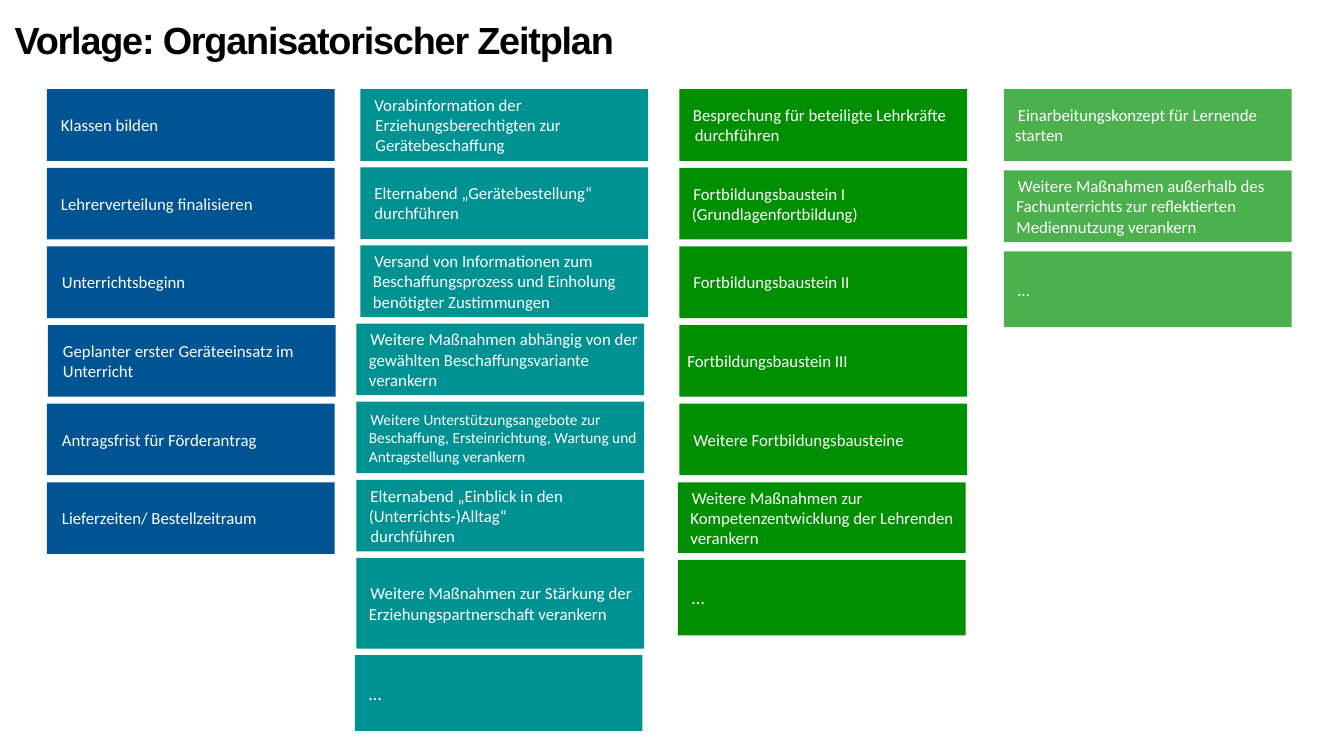
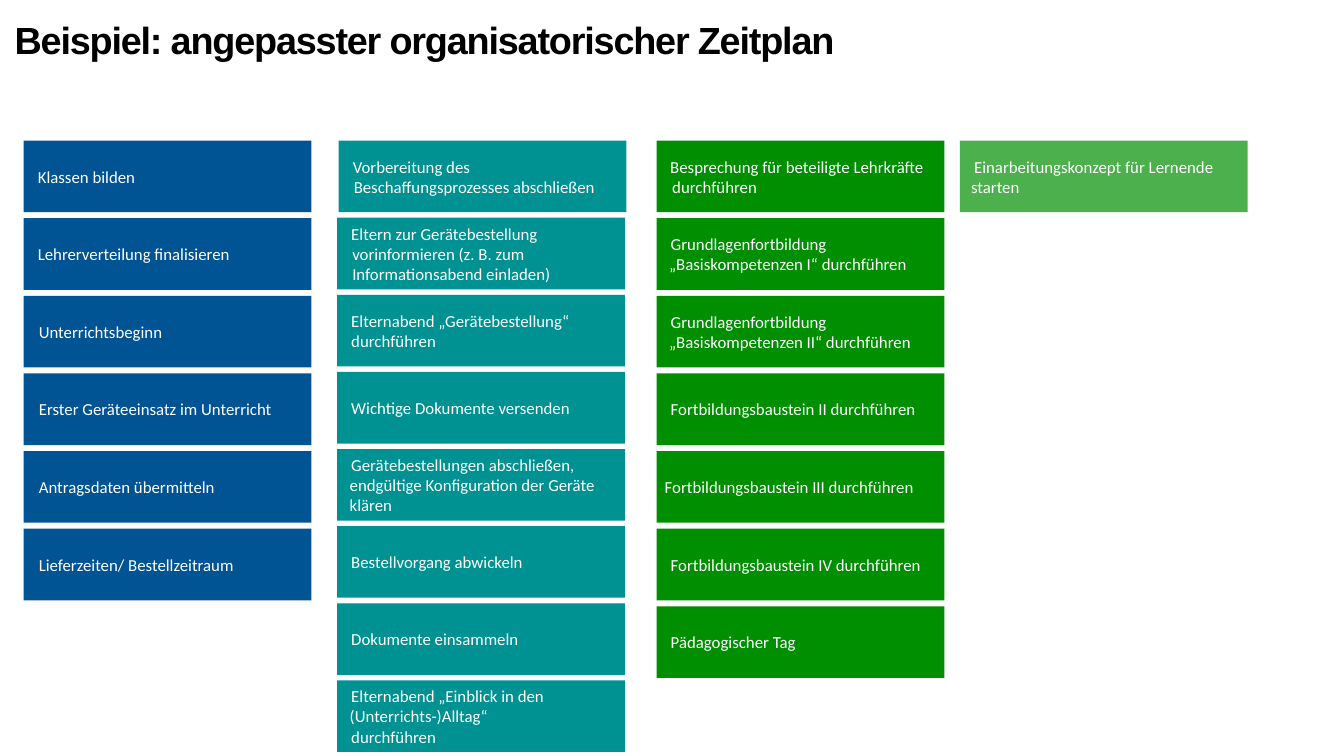
from dataclasses import dataclass

from lxml.etree import SubElement as Sub
from pptx import Presentation
from pptx.dml.color import RGBColor as RGB
from pptx.enum.shapes import MSO_SHAPE as Shape
from pptx.enum.text import MSO_ANCHOR as Anchor, MSO_AUTO_SIZE as Fit, PP_ALIGN as Align
from pptx.oxml.ns import qn
from pptx.util import Inches, Pt

# Colours
BLUE = RGB(0x00, 0x54, 0x93)
TEAL = RGB(0x00, 0x91, 0x93)
GREEN = RGB(0x00, 0x8F, 0x00)
WHITE = RGB(0xFF, 0xFF, 0xFF)
BLACK = RGB(0x00, 0x00, 0x00)

# Sizes in inches
WIDTH, HEIGHT = 26.67, 15
BOX_W, BOX_H = 5.71, 1.42

# Text indents: left margin and first line
NEAR = (0.25, 0.03)
EVEN = (0.3, 0)
STEP = (0.22, 0.06)
BACK = (0.31, -0.04)
HANG = (0.3, -0.02)
OUT = (0.22, -0.06)


@dataclass
class Box:
    text: str
    ind: tuple = NEAR
    high: float = BOX_H
    shift: float = 0
    size: int = 24


@dataclass
class Stack:
    left: float
    gap: float
    fill: RGB
    boxes: list
    alpha: int = 100


MOVED = -0.08  # lower teal boxes sit a little further left

PLAN = [
    Stack(0.93, 0.14, BLUE, [
        Box("Klassen bilden"),
        Box("Lehrerverteilung finalisieren"),
        Box("Unterrichtsbeginn", EVEN),
        Box("Geplanter erster Geräteeinsatz im Unterricht", EVEN, shift=0.02),
        Box("Antragsfrist für Förderantrag", EVEN),
        Box("Lieferzeiten/ Bestellzeitraum", EVEN),
    ]),
    Stack(7.15, 0.13, TEAL, [
        Box("Vorabinformation der Erziehungsberechtigten zur Gerätebeschaffung", HANG),
        Box("Elternabend „Gerätebestellung“\ndurchführen", STEP),
        Box("Versand von Informationen zum Beschaffungsprozess und Einholung "
            "benötigter Zustimmungen"),
        Box("Weitere Maßnahmen abhängig von der gewählten Beschaffungsvariante "
            "verankern", shift=MOVED),
        Box("Weitere Unterstützungsangebote zur Beschaffung, Ersteinrichtung, "
            "Wartung und Antragstellung verankern", shift=MOVED, size=22),
        Box("Elternabend „Einblick in den (Unterrichts-)Alltag“\ndurchführen", shift=MOVED),
        Box("Weitere Maßnahmen zur Stärkung der Erziehungspartnerschaft verankern",
            high=1.8, shift=MOVED),
        Box("…", high=1.5, shift=-0.11, size=26),
    ]),
    Stack(13.48, 0.14, GREEN, [
        Box("Besprechung für beteiligte Lehrkräfte durchführen", BACK),
        Box("Fortbildungsbaustein I (Grundlagenfortbildung)"),
        Box("Fortbildungsbaustein II"),
        Box("Fortbildungsbaustein III", OUT),
        Box("Weitere Fortbildungsbausteine"),
        Box("Weitere Maßnahmen zur Kompetenzentwicklung der Lehrenden verankern",
            high=1.4, shift=-0.03),
        Box("…", high=1.5, shift=-0.03, size=26),
    ]),
    Stack(19.92, 0.19, GREEN, [
        Box("Einarbeitungskonzept für Lernende starten", STEP),
        Box("Weitere Maßnahmen außerhalb des Fachunterrichts zur reflektierten "
            "Mediennutzung verankern"),
        Box("…", high=1.5),
    ], alpha=70),
]

SAMPLE = [
    Stack(0.47, 0.12, BLUE, [
        Box("Klassen bilden"),
        Box("Lehrerverteilung finalisieren"),
        Box("Unterrichtsbeginn", EVEN),
        Box("Erster Geräteeinsatz im Unterricht", EVEN),
        Box("Antragsdaten übermitteln", EVEN),
        Box("Lieferzeiten/ Bestellzeitraum", EVEN),
    ]),
    Stack(6.69, 0.11, TEAL, [
        Box("Vorbereitung des Beschaffungsprozesses abschließen", HANG, shift=0.03),
        Box("Eltern zur Gerätebestellung vorinformieren (z. B. zum "
            "Informationsabend einladen)", HANG),
        Box("Elternabend „Gerätebestellung“\ndurchführen", STEP),
        Box("Wichtige Dokumente versenden"),
        Box("Gerätebestellungen abschließen, endgültige Konfiguration der Geräte klären"),
        Box("Bestellvorgang abwickeln"),
        Box("Dokumente einsammeln"),
        Box("Elternabend „Einblick in den (Unterrichts-)Alltag“\ndurchführen"),
    ]),
    Stack(13.03, 0.12, GREEN, [
        Box("Besprechung für beteiligte Lehrkräfte durchführen", BACK),
        Box("Grundlagenfortbildung „Basiskompetenzen I“ durchführen"),
        Box("Grundlagenfortbildung „Basiskompetenzen II“ durchführen"),
        Box("Fortbildungsbaustein II durchführen", STEP),
        Box("Fortbildungsbaustein III durchführen", OUT),
        Box("Fortbildungsbaustein IV durchführen"),
        Box("Pädagogischer Tag"),
    ]),
    Stack(19.05, 0.12, GREEN, [
        Box("Einarbeitungskonzept für Lernende starten", STEP),
    ], alpha=70),
]


def set_font(para, name, size, color, bold=False):
    font = para.font
    font.name, font.size, font.bold = name, Pt(size), bold
    font.color.rgb = color


def set_pad(frame, pad):
    frame.margin_left = frame.margin_right = Inches(pad)
    frame.margin_top = frame.margin_bottom = Inches(pad)
    frame.word_wrap = True


def add_title(slide, text):
    title = slide.shapes.title
    title.left, title.top = Inches(0.23), Inches(0.45)
    title.width, title.height = Inches(24.03), Inches(1.57)
    frame = title.text_frame
    frame.text = text
    frame.auto_size = Fit.NONE
    frame.vertical_anchor = Anchor.TOP
    set_pad(frame, 0.06)
    para = frame.paragraphs[0]
    para.alignment, para.line_spacing = Align.LEFT, 0.8
    set_font(para, "Arial", 54, BLACK, True)
    # Tight letter spacing
    para.runs[0].font._element.set("spc", "-170")


def add_box(slide, box, left, top, fill, alpha):
    rect = slide.shapes.add_shape(Shape.RECTANGLE, Inches(left + box.shift), Inches(top),
                                  Inches(BOX_W), Inches(box.high))
    rect.shadow.inherit = False
    rect.line.fill.background()
    rect.fill.solid()
    rect.fill.fore_color.rgb = fill
    if alpha < 100:
        tint = rect._element.spPr.find(qn("a:solidFill"))[0]
        Sub(tint, qn("a:alpha")).set("val", str(alpha * 1000))
    frame = rect.text_frame
    frame.text = box.text
    frame.vertical_anchor = Anchor.MIDDLE
    set_pad(frame, 0)
    for para in frame.paragraphs:
        para.alignment = Align.LEFT
        set_font(para, "Calibri", box.size, WHITE)
        props = para._p.get_or_add_pPr()
        for key, value in zip(("marL", "indent"), box.ind):
            props.set(key, str(Inches(value)))


def add_stack(slide, stack, top):
    for box in stack.boxes:
        add_box(slide, box, stack.left, top, stack.fill, stack.alpha)
        top += box.high + stack.gap


def add_page(deck, title, top, stacks):
    slide = deck.slides.add_slide(deck.slide_layouts[5])
    add_title(slide, title)
    for stack in stacks:
        add_stack(slide, stack, top)


def main():
    deck = Presentation()
    deck.slide_width, deck.slide_height = Inches(WIDTH), Inches(HEIGHT)
    add_page(deck, "Vorlage: Organisatorischer Zeitplan", 1.77, PLAN)
    add_page(deck, "Beispiel: angepasster organisatorischer Zeitplan", 2.79, SAMPLE)
    deck.save("out.pptx")


if __name__ == "__main__":
    main()
